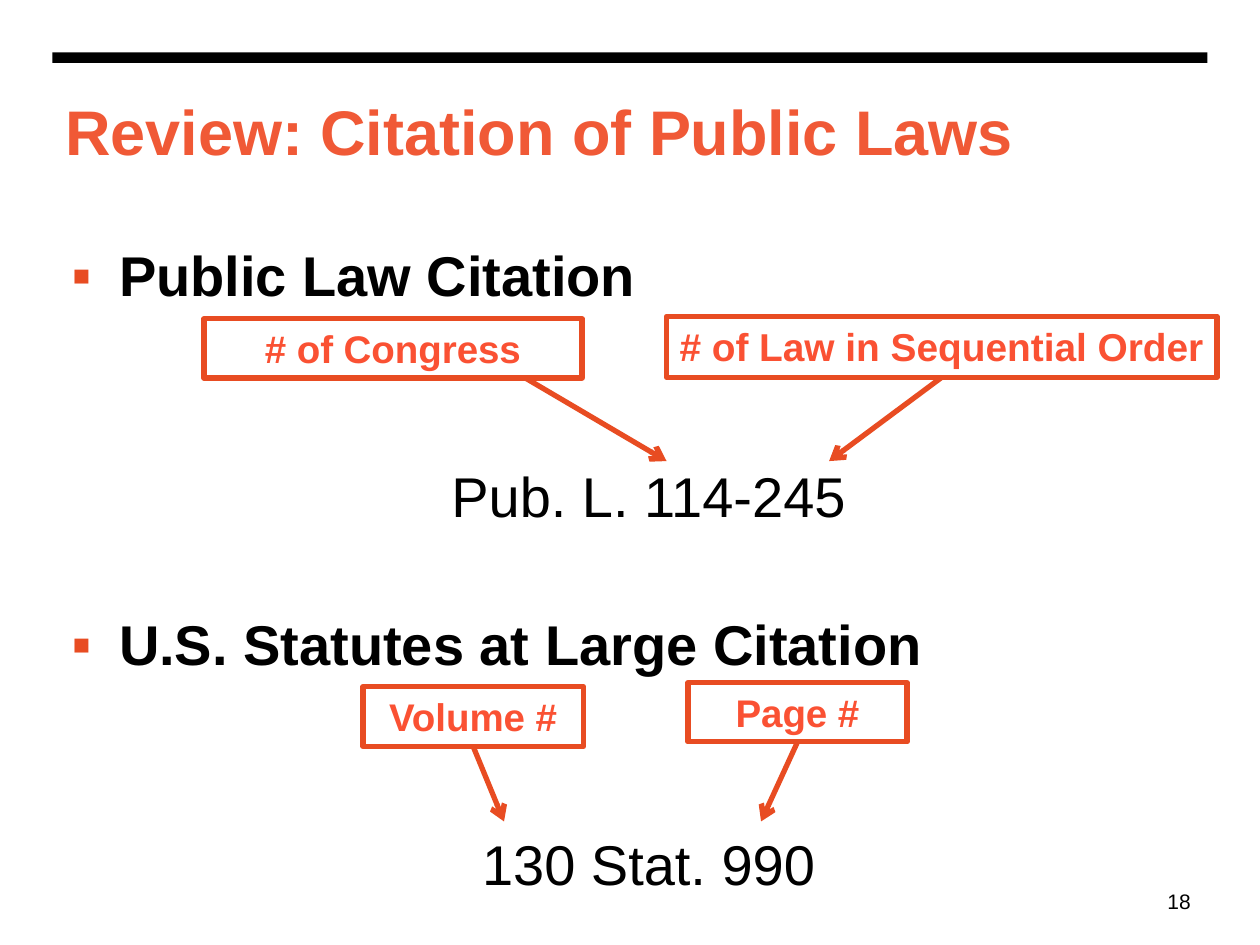
from pptx import Presentation
from pptx.dml.color import RGBColor as Rgb
from pptx.enum.shapes import MSO_CONNECTOR as Conn, MSO_SHAPE as Kind
from pptx.enum.text import MSO_ANCHOR as Anchor, MSO_AUTO_SIZE as Fit, PP_ALIGN as Align
from pptx.oxml.ns import qn
from pptx.util import Pt
from lxml.etree import SubElement as Sub

HUES = {"ink": "000000", "title": "F05936", "label": "FA5133", "line": "E84C22"}


class Deck:
    """Holds the style and the current slide; all lengths are points."""

    face = "Arial"
    weight = 3
    indent = 27

    def __init__(self, wide, high):
        self.prs = Presentation()
        self.prs.slide_width, self.prs.slide_height = Pt(wide), Pt(high)
        self.slide = self.prs.slides.add_slide(self.prs.slide_layouts[1])

    def hue(self, name):
        return Rgb.from_string(HUES[name])

    def apply(self, item, form):
        for name, value in form.items():
            setattr(item, name, value)

    def place(self, shape, *area):
        names = ("left", "top", "width", "height")
        self.apply(shape, dict(zip(names, map(Pt, area))))

    def fill_in(self, para, text, size, hue="ink", bold=False, **form):
        run = para.add_run()
        run.text = text
        self.apply(run.font, {"name": self.face, "size": Pt(size), "bold": bold})
        run.font.color.rgb = self.hue(hue)
        self.apply(para, form)

    def title(self, text, *area):
        shape = self.slide.shapes.title
        self.place(shape, *area)
        frame = shape.text_frame
        self.apply(frame, {"vertical_anchor": Anchor.MIDDLE, "auto_size": Fit.NONE})
        self.fill_in(frame.paragraphs[0], text, 36, "title", True,
                     alignment=Align.LEFT)

    def bullet(self, para, on):
        props = para._p.get_or_add_pPr()
        step = Pt(self.indent) if on else 0
        props.set("marL", str(step))
        props.set("indent", str(-step))
        if on:
            tint = Sub(props, qn("a:buClr"))
            Sub(tint, qn("a:srgbClr"), val=HUES["line"])
            Sub(props, qn("a:buChar"), char="▪")
        else:
            Sub(props, qn("a:buNone"))

    def body(self, rows, *area):
        shape = self.slide.placeholders[1]
        self.place(shape, *area)
        frame = shape.text_frame
        frame.auto_size = Fit.NONE
        for i, (text, head, gap) in enumerate(rows):
            para = frame.add_paragraph() if i else frame.paragraphs[0]
            self.bullet(para, head)
            self.fill_in(para, text, 32, bold=head, line_spacing=0.9,
                         space_before=Pt(gap),
                         alignment=Align.LEFT if head else Align.CENTER)

    def rule(self, *area):
        bar = self.slide.shapes.add_shape(Kind.RECTANGLE, *map(Pt, area))
        bar.shadow.inherit = False
        bar.fill.solid()
        bar.fill.fore_color.rgb = self.hue("ink")
        bar.line.fill.background()

    def stroke(self, shape):
        shape.line.color.rgb = self.hue("line")
        shape.line.width = Pt(self.weight)

    def label(self, text, size, *area):
        box = self.slide.shapes.add_shape(Kind.RECTANGLE, *map(Pt, area))
        box.shadow.inherit = False
        box.fill.background()
        self.stroke(box)
        frame = box.text_frame
        self.apply(frame, {"margin_left": Pt(3.6), "margin_right": Pt(3.6),
                           "vertical_anchor": Anchor.TOP, "word_wrap": True})
        self.fill_in(frame.paragraphs[0], text, size, "label", True,
                     alignment=Align.CENTER)
        return box

    def arrow(self, start, end, box=None):
        line = self.slide.shapes.add_connector(
            Conn.STRAIGHT, *map(Pt, (*start, *end)))
        if box is not None:
            line.begin_connect(box, 2)
        self.stroke(line)
        props = line._element.spPr
        Sub(props.find(qn("a:ln")), qn("a:tailEnd"), type="arrow")
        Sub(props, qn("a:effectLst"))

    def note(self, text, *area):
        box = self.slide.shapes.add_textbox(*map(Pt, area))
        box.text_frame.word_wrap = True
        self.fill_in(box.text_frame.paragraphs[0], text, 12)


def main():
    deck = Deck(720, 540)

    # Top rule and page number
    deck.rule(30, 30, 660, 6)
    deck.note("18", 660, 504, 48, 21.6)

    # Title and citations
    deck.title("Review: Citation of Public Laws", 30, 35.3, 633.6, 77.8)
    deck.body([
        ("Public Law Citation", True, 0),
        ("Pub. L. 114-245", False, 91.5),
        ("U.S. Statutes at Large Citation", True, 50),
        ("130 Stat. 990", False, 91.5),
    ], 33.8, 138.2, 673.9, 383.8)

    # Labels with arrows: text, size, area, arrow tip, arrow start if off-centre
    parts = [
        ("# of Congress", 22, (116.6, 182.2, 216, 33.8), (380.9, 263.5), (300.2, 216)),
        ("# of Law in Sequential Order", 22.2, (380.9, 180.7, 314.6, 34.9),
         (473.8, 263.5), None),
        ("Volume #", 22, (207.4, 392.4, 126, 34.2), (288, 469.4), None),
        ("Page #", 22, (393.1, 390.2, 125.3, 33.8), (434.9, 469.4), None),
    ]
    for text, size, area, tip, start in parts:
        box = deck.label(text, size, *area)
        if start:
            deck.arrow(start, tip)
        else:
            deck.arrow(tip, tip, box)

    deck.prs.save("out.pptx")


if __name__ == "__main__":
    main()
